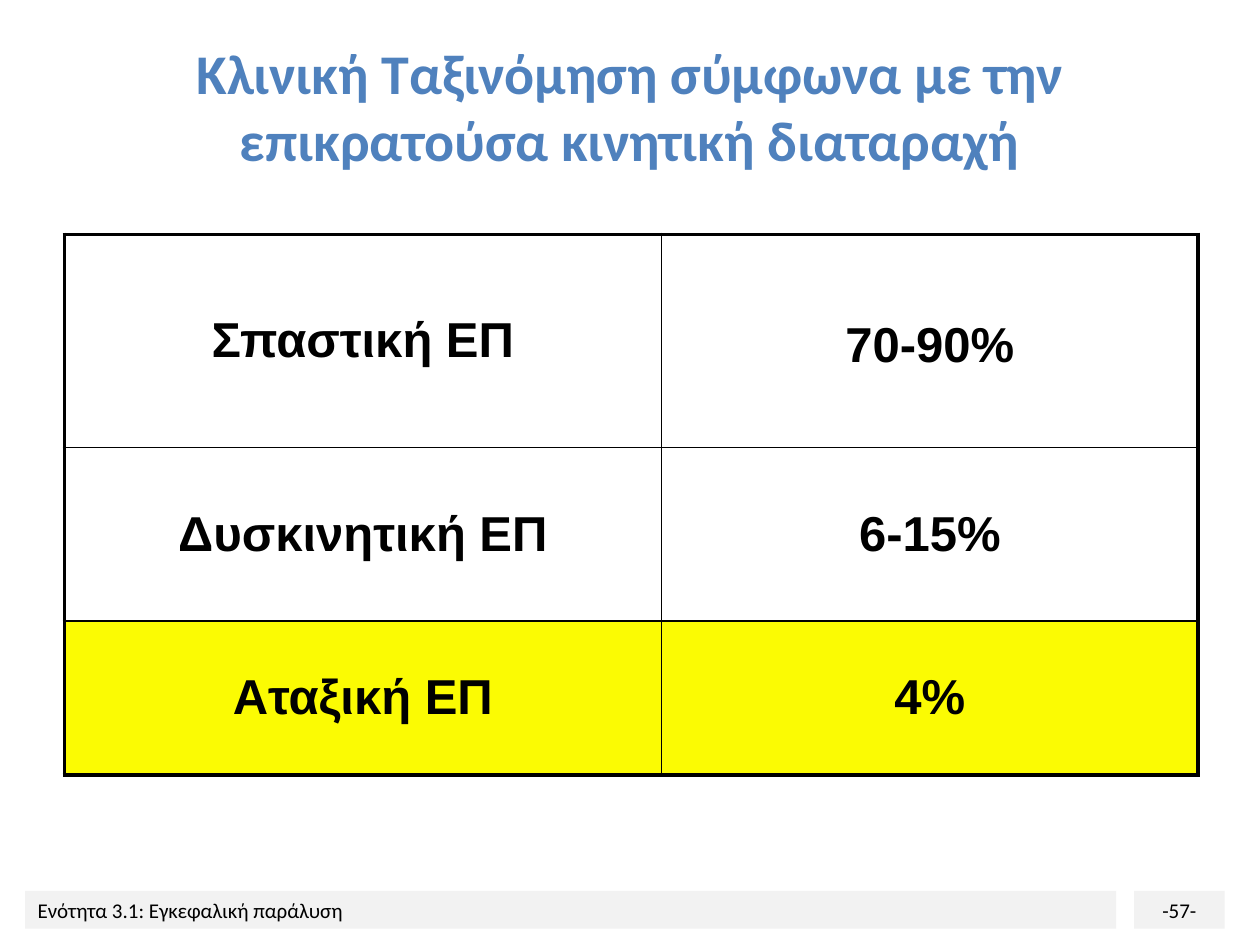
"""Build the slide on the clinical classification of cerebral palsy."""
from lxml import etree
from pptx import Presentation
from pptx.dml.color import RGBColor
from pptx.enum.shapes import MSO_SHAPE
from pptx.enum.text import MSO_ANCHOR, MSO_AUTO_SIZE, PP_ALIGN
from pptx.oxml.ns import qn
from pptx.util import Inches, Pt

RECTANGLE = MSO_SHAPE.RECTANGLE
MIDDLE = MSO_ANCHOR.MIDDLE
LEFT, CENTER = PP_ALIGN.LEFT, PP_ALIGN.CENTER
NO_AUTOFIT = MSO_AUTO_SIZE.NONE
TITLE_ONLY = 5

TITLE = "Κλινική Ταξινόμηση σύμφωνα με την επικρατούσα κινητική διαταραχή"
TYPES = [
    {"cells": ("Σπαστική ΕΠ", "70-90%"), "height": 1.69, "fill": None},
    {"cells": ("Δυσκινητική ΕΠ", "6-15%"), "height": 1.38, "fill": None},
    {"cells": ("Αταξική ΕΠ", "4%"), "height": 1.22, "fill": "highlight"},
]
COLUMN_WIDTHS = (4.74, 4.26)
TABLE_LEFT, TABLE_TOP = 0.51, 1.86
FOOTERS = [
    ("Ενότητα 3.1: Εγκεφαλική παράλυση", 0.2, 8.66, LEFT),
    ("-57-", 9, 0.72, CENTER),
]
FOOTER_TOP, FOOTER_HEIGHT = 7.07, 0.3

THEME = {
    "title": ("Calibri", 32, True, "4F81BD"),
    "cell": ("Arial", 28, True, "000000"),
    "footer": ("Calibri", 12, False, "000000"),
    "footer_fill": "F2F2F2",
    "highlight": "FBFB03",
    "border": "000000",
    "outer_line": 2.25,
    "inner_line": 1,
}


def write(text_frame, text, style, alignment):
    name, size, bold, color = THEME[style]
    text_frame.text = text
    paragraph = text_frame.paragraphs[0]
    paragraph.alignment = alignment
    font = paragraph.font
    font.name, font.size, font.bold = name, Pt(size), bold
    font.color.rgb = RGBColor.from_string(color)
    return paragraph


def add_border(cell, side, width):
    properties = cell._tc.get_or_add_tcPr()
    line = etree.SubElement(properties, qn(f"a:ln{side}"), w=str(Pt(width)))
    fill = etree.SubElement(line, qn("a:solidFill"))
    etree.SubElement(fill, qn("a:srgbClr"), val=THEME["border"])


def add_title(slide):
    title = slide.shapes.title
    title.left, title.top = Inches(0.5), Inches(0.3)
    title.width, title.height = Inches(9), Inches(1.08)
    write(title.text_frame, TITLE, "title", CENTER)
    title.text_frame.vertical_anchor = MIDDLE
    title.text_frame.auto_size = NO_AUTOFIT


def add_type_table(slide):
    row_count, column_count = len(TYPES), len(COLUMN_WIDTHS)
    table = slide.shapes.add_table(
        row_count, column_count, Inches(TABLE_LEFT), Inches(TABLE_TOP),
        Inches(sum(COLUMN_WIDTHS)), Inches(sum(row["height"] for row in TYPES)),
    ).table
    table.first_row = table.horz_banding = False
    for column, width in zip(table.columns, COLUMN_WIDTHS):
        column.width = Inches(width)
    for row_index, row in enumerate(TYPES):
        table.rows[row_index].height = Inches(row["height"])
        for column_index, text in enumerate(row["cells"]):
            cell = table.cell(row_index, column_index)
            cell.margin_left = cell.margin_right = Inches(0.14)
            cell.vertical_anchor = MIDDLE
            write(cell.text_frame, text, "cell", CENTER).space_before = Pt(5.6)
            outer_sides = {
                "L": column_index == 0,
                "R": column_index == column_count - 1,
                "T": row_index == 0,
                "B": row_index == row_count - 1,
            }
            for side, outer in outer_sides.items():
                add_border(cell, side, THEME["outer_line" if outer else "inner_line"])
            if row["fill"]:
                cell.fill.solid()
                cell.fill.fore_color.rgb = RGBColor.from_string(THEME[row["fill"]])
            else:
                cell.fill.background()
    table.cell(0, 1).margin_top = Inches(0.13)


def add_footers(slide):
    for text, left, width, alignment in FOOTERS:
        footer = slide.shapes.add_shape(
            RECTANGLE, Inches(left), Inches(FOOTER_TOP), Inches(width), Inches(FOOTER_HEIGHT)
        )
        footer.shadow.inherit = False
        footer.fill.solid()
        footer.fill.fore_color.rgb = RGBColor.from_string(THEME["footer_fill"])
        footer.line.fill.background()
        footer.text_frame.word_wrap = True
        footer.text_frame.vertical_anchor = MIDDLE
        write(footer.text_frame, text, "footer", alignment)


def main():
    presentation = Presentation()
    presentation.slide_width, presentation.slide_height = Inches(10), Inches(7.5)
    slide = presentation.slides.add_slide(presentation.slide_layouts[TITLE_ONLY])
    add_footers(slide)
    add_title(slide)
    add_type_table(slide)
    presentation.save("out.pptx")


if __name__ == "__main__":
    main()
